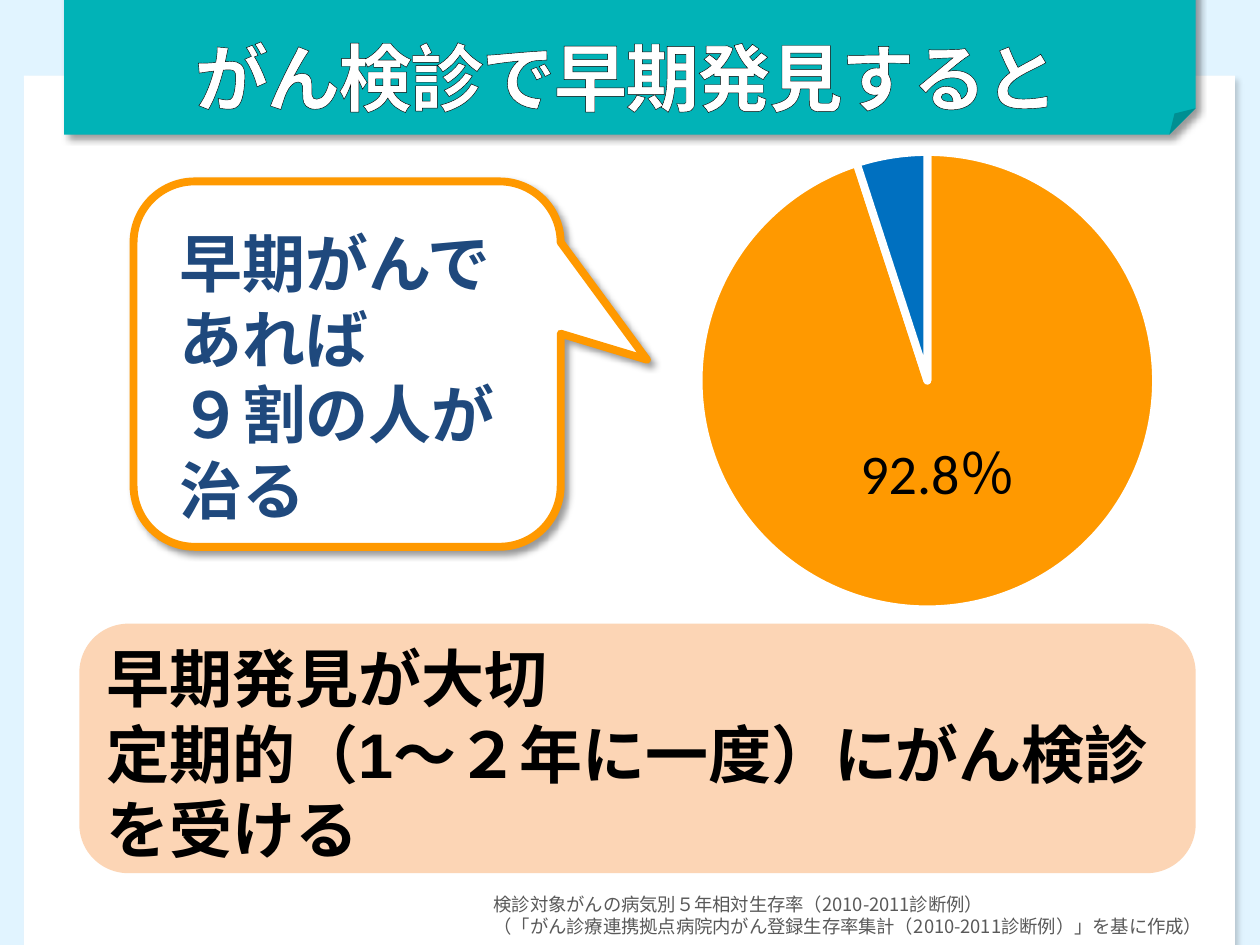
from dataclasses import dataclass
from typing import Optional

from lxml.etree import SubElement
from pptx import Presentation
from pptx.chart.data import CategoryChartData
from pptx.dml.color import RGBColor
from pptx.enum.chart import XL_CHART_TYPE
from pptx.enum.shapes import MSO_SHAPE as Shape
from pptx.enum.text import MSO_ANCHOR as Anchor, PP_ALIGN as Align
from pptx.oxml import parse_xml
from pptx.oxml.ns import nsdecls, qn
from pptx.util import Emu, Inches, Pt

WHITE = RGBColor(0xFF, 0xFF, 0xFF)
BLACK = RGBColor(0, 0, 0)
GREY = RGBColor(0x59, 0x59, 0x59)
PALE_BLUE = RGBColor(0xE1, 0xF4, 0xFF)
TEAL = RGBColor(0x01, 0xB3, 0xB7)
PEACH = RGBColor(0xFC, 0xD5, 0xB5)
ORANGE = RGBColor(0xFF, 0x99, 0x00)
BLUE = RGBColor(0x00, 0x70, 0xC0)
NAVY = RGBColor(0x1F, 0x49, 0x7D)

JP, LATIN, BODY = "Noto Sans CJK JP", "Calibri", "Arial"
WIDTH, HEIGHT = Inches(10), Inches(7.5)
COL, ROW = WIDTH / 100, HEIGHT / 75  # grid of 100 columns by 75 rows


@dataclass(frozen=True)
class Box:
    col: float
    row: float
    cols: float
    rows: float

    def emu(self) -> tuple[Emu, Emu, Emu, Emu]:
        return (Emu(round(self.col * COL)), Emu(round(self.row * ROW)),
                Emu(round(self.cols * COL)), Emu(round(self.rows * ROW)))


@dataclass(frozen=True)
class Text:
    lines: tuple[str, ...]
    size: float
    font: str
    color: RGBColor
    bold: bool = False
    align: Align = Align.LEFT
    anchor: Anchor = Anchor.TOP
    insets: tuple[float, float, float, float] = (0.1, 0.05, 0.1, 0.05)


@dataclass(frozen=True)
class Panel:
    shape: Shape
    box: Box
    fill: RGBColor
    adjustments: tuple[float, ...] = ()
    line: Optional[RGBColor] = None
    shadow: Optional[tuple[int, float, float]] = None  # opacity %, blur, distance
    text: Optional[Text] = None


PAGE = Panel(Shape.RECTANGLE, Box(1.9, 6, 96.1, 70.7), WHITE, shadow=(18, 3, 4))
BANNER = Panel(Shape.FOLDED_CORNER, Box(5.1, -1.9, 89.8, 12.6), TEAL, shadow=(40, 4, 3))
ADVICE = Panel(
    Shape.ROUNDED_RECTANGLE, Box(6.3, 49.5, 88.6, 19.8), PEACH, (0.196,),
    text=Text(("早期発見が大切", "定期的（1～２年に一度）にがん検診を受ける"), 36, BODY, BLACK,
              bold=True, anchor=Anchor.MIDDLE, insets=(0.1, 0.12, 0.1, 0.05)))
CALLOUT = Panel(
    Shape.ROUNDED_RECTANGULAR_CALLOUT, Box(10.6, 14.4, 33.9, 29), WHITE,
    (0.702, -0.012, 0.167), ORANGE, (40, 4, 3),
    Text(("早期がんで", "あれば", "９割の人が", "治る"), 36, JP, NAVY,
         bold=True, insets=(0.22, 0.2, 0.1, 0.05)))

TITLE_BOX = Box(-0.3, 2, 100, 8.1)
TITLE = Text(("がん検診で早期発見すると",), 42, JP, WHITE, bold=True,
             align=Align.CENTER, anchor=Anchor.MIDDLE)
PIE_BOX = Box(44.5, 10.4, 58.2, 39.6)
PIE_DIAMETER = 36.3
SOURCE_BOX = Box(38.2, 70.4, 66.6, 4.5)
SOURCE = Text(("検診対象がんの病気別５年相対生存率（2010-2011診断例）",
               "（「がん診療連携拠点病院内がん登録生存率集計（2010-2011診断例）」を基に作成）"),
              10.5, JP, GREY)
RATE_BOX = Box(67.3, 34.3, 17.4, 6.4)
RATE = Text(("92.8％",), 32, LATIN, BLACK)


def write(tf, text: Text) -> None:
    tf.word_wrap = True
    tf.vertical_anchor = text.anchor
    tf.margin_left, tf.margin_top, tf.margin_right, tf.margin_bottom = map(Inches, text.insets)
    tf.text = "\n".join(text.lines)
    for p in tf.paragraphs:
        p.alignment = text.align
        p.font.size, p.font.bold = Pt(text.size), text.bold
        p.font.name, p.font.color.rgb = text.font, text.color
        latin = p.font._element.find(qn("a:latin"))
        latin.addnext(parse_xml(f'<a:ea {nsdecls("a")} typeface="{text.font}"/>'))


def add_shadow(sp, opacity: int, blur: float, distance: float) -> None:
    effects = sp.element.spPr.find(qn("a:effectLst"))
    shadow = SubElement(effects, qn("a:outerShdw"), blurRad=str(Pt(blur)),
                        dist=str(Pt(distance)), dir="2700000", algn="tl", rotWithShape="0")
    color = SubElement(shadow, qn("a:srgbClr"), val=str(BLACK))
    SubElement(color, qn("a:alpha"), val=str(opacity * 1000))


def add_panel(s, panel: Panel) -> None:
    sp = s.shapes.add_shape(panel.shape, *panel.box.emu())
    for i, value in enumerate(panel.adjustments):
        sp.adjustments[i] = value
    sp.fill.solid()
    sp.fill.fore_color.rgb = panel.fill
    if panel.line is None:
        sp.line.fill.background()
    else:
        sp.line.color.rgb = panel.line
        sp.line.width = Pt(4.5)
    sp.shadow.inherit = False
    if panel.shadow:
        add_shadow(sp, *panel.shadow)
    if panel.text:
        write(sp.text_frame, panel.text)


def add_label(s, box: Box, text: Text) -> None:
    write(s.shapes.add_textbox(*box.emu()).text_frame, text)


def place_title(s) -> None:
    """Move the title placeholder above the banner and outline its letters."""
    sp = s.shapes.title
    sp.left, sp.top, sp.width, sp.height = TITLE_BOX.emu()
    sp.element.getparent().append(sp.element)
    write(sp.text_frame, TITLE)
    r_pr = sp.text_frame.paragraphs[0].runs[0].font._element
    r_pr.set("spc", "-100")
    r_pr.insert(0, parse_xml(
        f'<a:ln {nsdecls("a")} w="{Pt(0.75)}"><a:solidFill>'
        f'<a:srgbClr val="{BLACK}"/></a:solidFill></a:ln>'))


def add_pie(s) -> None:
    data = CategoryChartData()
    data.categories = ["1", "2"]
    data.add_series("Series 1", (95, 5))
    chart = s.shapes.add_chart(XL_CHART_TYPE.PIE, *PIE_BOX.emu(), data).chart
    chart.has_legend = chart.has_title = False
    chart.font.size, chart.font.name, chart.font.color.rgb = Pt(18), LATIN, BLACK
    plot = chart.plots[0]
    plot.vary_by_categories = True
    for i, color in enumerate((ORANGE, BLUE)):
        fmt = plot.series[0].points[i].format
        fmt.fill.solid()
        fmt.fill.fore_color.rgb = color
        fmt.line.color.rgb = WHITE
        fmt.line.width = Pt(4.5)
    w, h = PIE_DIAMETER / PIE_BOX.cols, PIE_DIAMETER / PIE_BOX.rows
    area = chart._chartSpace.chart.plotArea
    for old in area.findall(qn("c:layout")):
        area.remove(old)
    area.insert(0, parse_xml(
        f'<c:layout {nsdecls("c")}><c:manualLayout><c:layoutTarget val="inner"/>'
        '<c:xMode val="edge"/><c:yMode val="edge"/>'
        f'<c:x val="{(1 - w) / 2:.3f}"/><c:y val="{(1 - h) / 2:.3f}"/>'
        f'<c:w val="{w:.3f}"/><c:h val="{h:.3f}"/></c:manualLayout></c:layout>'))


def main() -> None:
    prs = Presentation()
    prs.slide_width, prs.slide_height = WIDTH, HEIGHT
    s = prs.slides.add_slide(prs.slide_layouts[5])
    s.background.fill.solid()
    s.background.fill.fore_color.rgb = PALE_BLUE
    add_panel(s, PAGE)
    add_panel(s, BANNER)
    place_title(s)
    add_panel(s, ADVICE)
    add_pie(s)
    add_panel(s, CALLOUT)
    add_label(s, SOURCE_BOX, SOURCE)
    add_label(s, RATE_BOX, RATE)
    prs.save("out.pptx")


if __name__ == "__main__":
    main()
